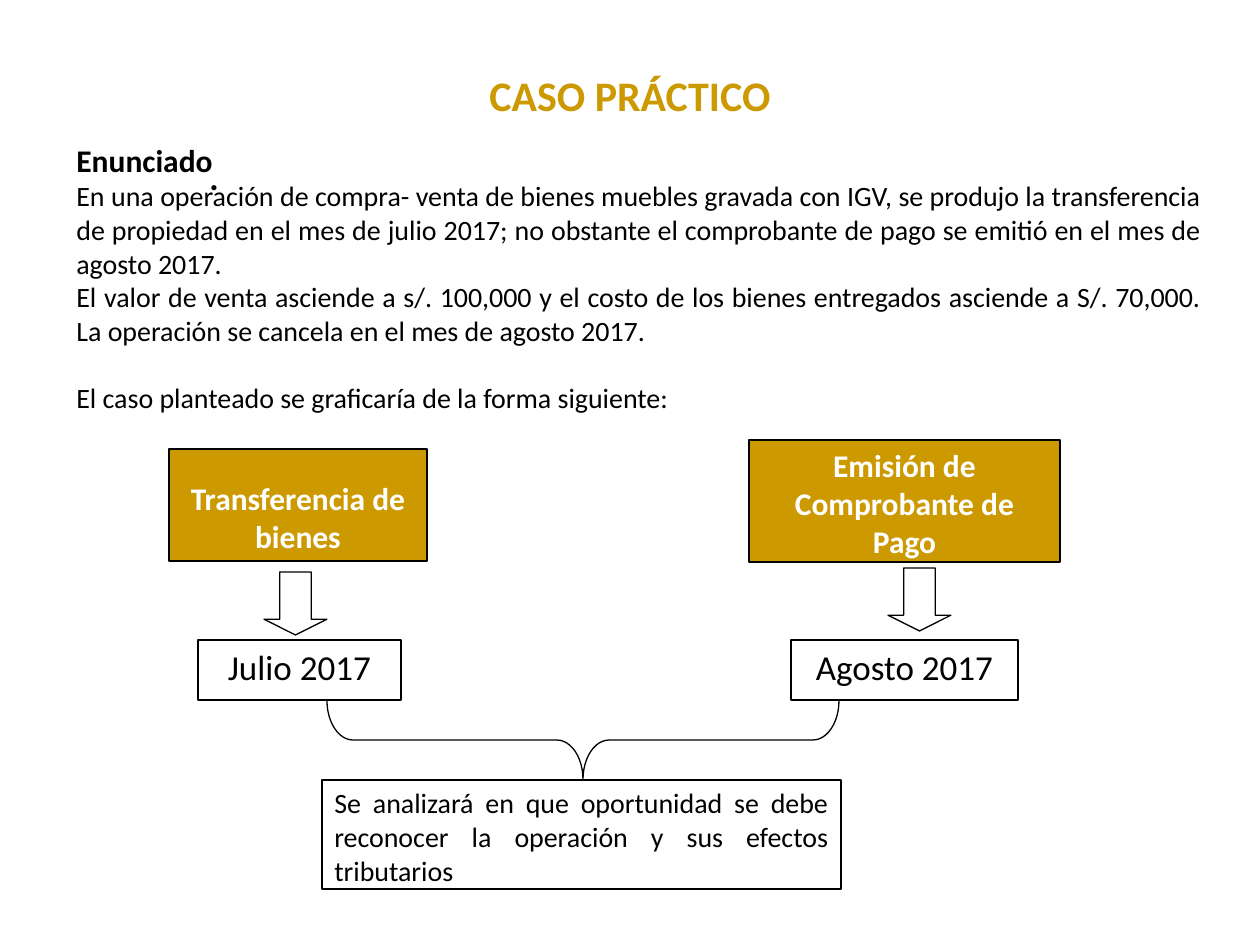
"""Build the "Caso práctico" slide: a sale case and its timeline diagram."""
from dataclasses import dataclass

from pptx import Presentation
from pptx.dml.color import RGBColor
from pptx.enum.shapes import MSO_SHAPE as Shape
from pptx.enum.text import MSO_ANCHOR as Anchor, PP_ALIGN as Align
from pptx.util import Emu, Pt


@dataclass(frozen=True)
class Theme:
    font: str = "Calibri"
    gold: RGBColor = RGBColor(0xCC, 0x99, 0x00)
    black: RGBColor = RGBColor(0, 0, 0)
    white: RGBColor = RGBColor(0xFF, 0xFF, 0xFF)
    title: int = 24
    month: int = 20
    heading: int = 18
    body: int = 16
    border: float = 0.75


THEME = Theme()
PX = 914400 / 126

TITLE = "CASO PRÁCTICO"
HEADING = "Enunciado"
STATEMENT = [
    ("En una operación de compra- venta de bienes muebles gravada con IGV, se produjo "
     "la transferencia de propiedad en el mes de julio 2017; no obstante el comprobante "
     "de pago se emitió en el mes de agosto 2017.", Align.JUSTIFY, 0),
    ("El valor de venta asciende a s/. 100,000 y el costo de los bienes entregados "
     "asciende a S/. 70,000. La operación se cancela en el mes de agosto 2017.",
     Align.JUSTIFY, 0),
    ("El caso planteado se graficaría de la forma siguiente:", Align.LEFT, 19.5),
]
EVENTS = [
    ("Transferencia de bienes", (169, 449, 258, 112), 30),
    ("Emisión de Comprobante de Pago", (749, 440, 311, 122), 6),
]
MONTHS = [
    ("Julio 2017", (198, 640, 203, 60)),
    ("Agosto 2017", (791, 640, 227, 60)),
]
ARROWS = [(264, 572, 63, 63), (888, 568, 63, 63)]
CONCLUSION = ("Se analizará en que oportunidad se debe reconocer la operación "
              "y sus efectos tributarios")
CONCLUSION_AREA = (322, 780, 519, 109)
BRACE_CENTER, BRACE_SIZE = (583, 740), (79, 512)


def px(value):
    return Emu(round(value * PX))


def write(paragraph, text, size, color=THEME.black, bold=False, align=Align.LEFT):
    paragraph.text = text
    paragraph.alignment = align
    font = paragraph.font
    font.name, font.size, font.bold = THEME.font, Pt(size), bold
    font.color.rgb = color


def add_text(slide, area):
    frame = slide.shapes.add_textbox(*map(px, area)).text_frame
    frame.word_wrap = True
    return frame


def add_outlined(slide, kind, area, fill=None):
    shape = slide.shapes.add_shape(kind, *map(px, area))
    shape.shadow.inherit = False
    shape.line.color.rgb = THEME.black
    shape.line.width = Pt(THEME.border)
    if fill is None:
        shape.fill.background()
    else:
        shape.fill.solid()
        shape.fill.fore_color.rgb = fill
    return shape


def add_box(slide, area, fill, text, size, color=THEME.black, bold=False,
            align=Align.CENTER, top=6):
    frame = add_outlined(slide, Shape.RECTANGLE, area, fill).text_frame
    frame.word_wrap = True
    frame.vertical_anchor = Anchor.TOP
    frame.margin_top = px(top)
    write(frame.paragraphs[0], text, size, color, bold, align)


def add_statement(slide):
    stray_dot = add_text(slide, (197, 149, 1031, 55))
    write(stray_dot.paragraphs[0], ".", THEME.month, bold=True, align=Align.JUSTIFY)

    title = add_text(slide, (64, 63, 1132, 63))
    title.vertical_anchor = Anchor.MIDDLE
    write(title.paragraphs[0], TITLE, THEME.title, THEME.gold, True, Align.CENTER)

    statement = add_text(slide, (64, 135, 1150, 289))
    write(statement.paragraphs[0], HEADING, THEME.heading, bold=True)
    for text, align, gap in STATEMENT:
        paragraph = statement.add_paragraph()
        write(paragraph, text, THEME.body, align=align)
        paragraph.space_before = Pt(gap)


def add_diagram(slide):
    for text, area, top in EVENTS:
        add_box(slide, area, THEME.gold, text, THEME.heading, THEME.white, True, top=top)
    for text, area in MONTHS:
        add_box(slide, area, THEME.white, text, THEME.month)
    add_box(slide, CONCLUSION_AREA, THEME.white, CONCLUSION, THEME.body,
            align=Align.JUSTIFY)
    for area in ARROWS:
        arrow = add_outlined(slide, Shape.DOWN_ARROW, area, THEME.white)
        arrow.adjustments[0], arrow.adjustments[1] = 0.5, 0.25

    (x, y), (width, height) = BRACE_CENTER, BRACE_SIZE
    brace = add_outlined(slide, Shape.LEFT_BRACE,
                         (x - width / 2, y - height / 2, width, height))
    brace.rotation = 270
    brace.adjustments[0], brace.adjustments[1] = 0.33, 0.5


def main():
    deck = Presentation()
    deck.slide_width, deck.slide_height = px(1260), px(945)
    slide = deck.slides.add_slide(deck.slide_layouts[6])
    add_statement(slide)
    add_diagram(slide)
    deck.save("out.pptx")


if __name__ == "__main__":
    main()
